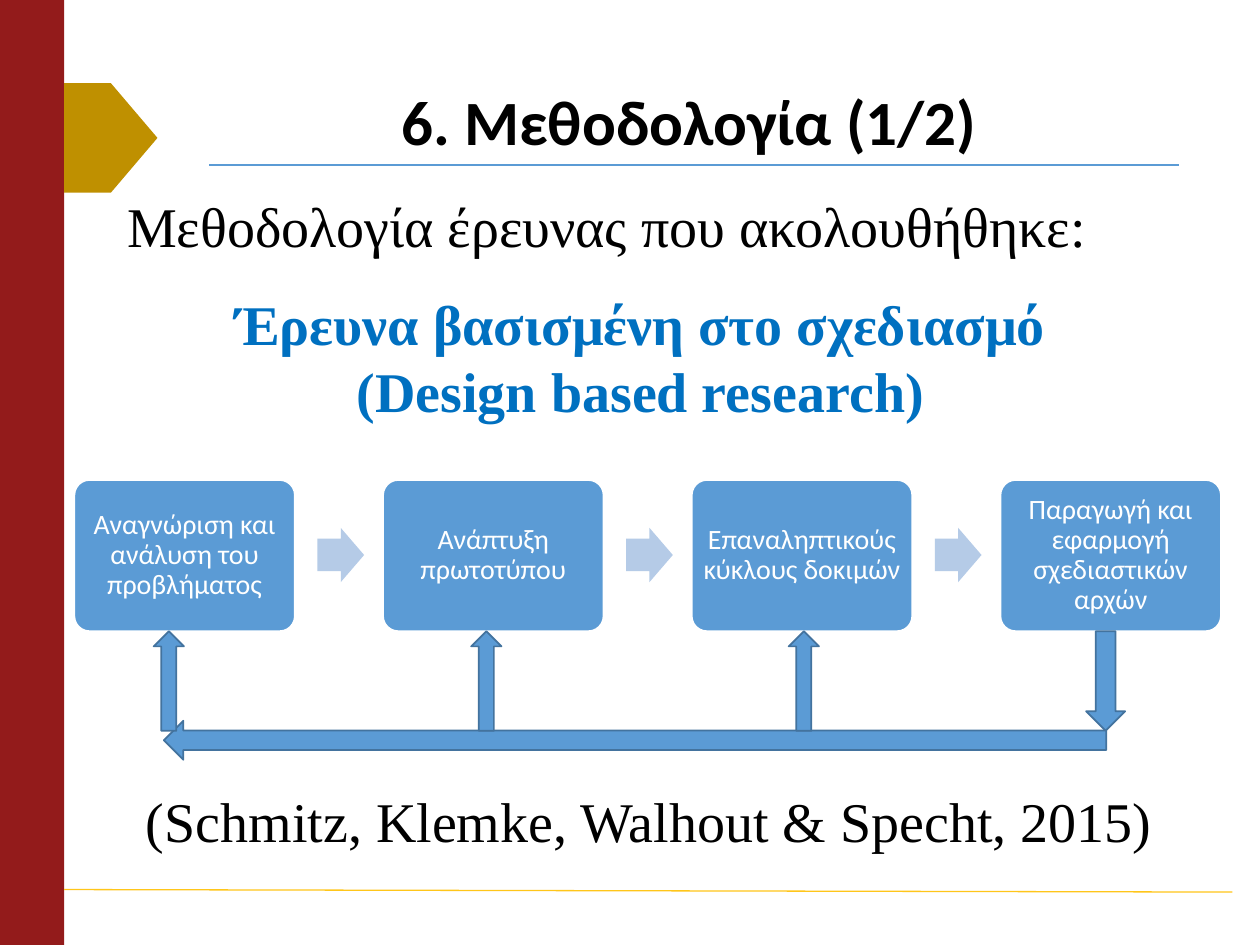
import dataclasses

import pptx
import pptx.dml.color
import pptx.enum.shapes
import pptx.enum.text
import pptx.oxml.ns
import pptx.util
from lxml import etree

Inches = pptx.util.Inches
Pt = pptx.util.Pt
Preset = pptx.enum.shapes.MSO_SHAPE
Align = pptx.enum.text.PP_ALIGN
Anchor = pptx.enum.text.MSO_ANCHOR


@dataclasses.dataclass(frozen=True)
class Theme:
    blue: str = "5B9BD5"
    dark_blue: str = "43739E"
    pale_blue: str = "B5CBE7"
    emphasis: str = "0070C0"
    red: str = "931B1B"
    ochre: str = "BF9000"
    yellow: str = "FFC61A"
    black: str = "000000"
    white: str = "FFFFFF"
    sans: str = "Calibri"
    serif: str = "Times New Roman"
    title_size: int = 36
    body_size: int = 32
    step_size: int = 16


THEME = Theme()

STEPS = [
    "Αναγνώριση και ανάλυση του προβλήματος",
    "Ανάπτυξη πρωτοτύπου",
    "Επαναληπτικούς κύκλους δοκιμών",
    "Παραγωγή και εφαρμογή σχεδιαστικών αρχών",
]
STEP_LEFT, STEP_TOP, STEP_PITCH = 0.59, 3.81, 2.45
STEP_WIDTH, STEP_HEIGHT = 1.75, 1.2
FEEDBACK_LEFT, FEEDBACK_PITCH = 1.22, 2.52
FEEDBACK_TOP, FEEDBACK_HEIGHT = 5.01, 0.79


def rgb(color):
    return pptx.dml.color.RGBColor.from_string(color)


def write_text(frame, text, *, size, color=THEME.black, font=THEME.serif,
               bold=False, align=Align.LEFT, anchor=Anchor.TOP,
               spacing=1.0, margin=None):
    frame.word_wrap = True
    frame.vertical_anchor = anchor
    if margin is not None:
        frame.margin_left = frame.margin_right = Inches(margin)
        frame.margin_top = frame.margin_bottom = Inches(margin)
    frame.text = text
    for paragraph in frame.paragraphs:
        paragraph.alignment = align
        paragraph.line_spacing = spacing
        paragraph.font.name = font
        paragraph.font.size = Pt(size)
        paragraph.font.bold = bold
        paragraph.font.color.rgb = rgb(color)


def add_text(slide, box, text, **text_format):
    frame = slide.shapes.add_textbox(*map(Inches, box)).text_frame
    write_text(frame, text, **text_format)


def add_preset(slide, preset, box, fill, line=None, adjustments=()):
    shape = slide.shapes.add_shape(preset, *map(Inches, box))
    shape.shadow.inherit = False
    shape.fill.solid()
    shape.fill.fore_color.rgb = rgb(fill)
    if line:
        shape.line.color.rgb = rgb(line)
        shape.line.width = Pt(1)
    else:
        shape.line.fill.background()
    for index, value in enumerate(adjustments):
        shape.adjustments[index] = value
    return shape


def add_rule(slide, start, end, color):
    rule = slide.shapes.add_connector(
        pptx.enum.shapes.MSO_CONNECTOR.STRAIGHT, *map(Inches, start + end))
    rule.line.color.rgb = rgb(color)
    rule.line.width = Pt(0.75)
    etree.SubElement(rule._element.spPr, pptx.oxml.ns.qn("a:effectLst"))


def add_frame(slide):
    add_preset(slide, Preset.RECTANGLE, (0, 0, 0.51, 7.5), THEME.red)
    add_rule(slide, (1.66, 1.31), (9.36, 1.31), THEME.blue)
    add_rule(slide, (0.51, 7.06), (9.78, 7.08), THEME.yellow)
    add_preset(slide, Preset.PENTAGON, (0.51, 0.66, 0.74, 0.87), THEME.ochre)


def add_steps(slide):
    for index, label in enumerate(STEPS):
        left = STEP_LEFT + index * STEP_PITCH
        if index:
            add_preset(slide, Preset.RIGHT_ARROW,
                       (left - 0.52, 4.19, 0.37, 0.43),
                       THEME.pale_blue, adjustments=(0.6, 0.5))
        step = add_preset(slide, Preset.ROUNDED_RECTANGLE,
                          (left, STEP_TOP, STEP_WIDTH, STEP_HEIGHT),
                          THEME.blue, THEME.white, (0.1,))
        write_text(step.text_frame, label, size=THEME.step_size,
                   color=THEME.white, font=THEME.sans, align=Align.CENTER,
                   anchor=Anchor.MIDDLE, spacing=0.9, margin=0.04)


def add_feedback_loop(slide):
    arrows = [
        (Preset.DOWN_ARROW, (8.62, FEEDBACK_TOP, 0.31, FEEDBACK_HEIGHT)),
        (Preset.LEFT_ARROW, (1.3, 5.72, 7.48, 0.31)),
    ]
    for index in range(len(STEPS) - 1):
        left = FEEDBACK_LEFT + index * FEEDBACK_PITCH
        arrows.append((Preset.UP_ARROW,
                       (left, FEEDBACK_TOP, 0.24, FEEDBACK_HEIGHT)))
    for preset, box in arrows:
        add_preset(slide, preset, box, THEME.blue, THEME.dark_blue)


def main():
    deck = pptx.Presentation()
    deck.slide_width, deck.slide_height = Inches(10), Inches(7.5)
    slide = deck.slides.add_slide(deck.slide_layouts[6])

    add_frame(slide)
    add_text(slide, (1.61, 0.68, 7.72, 0.63), "6. Μεθοδολογία (1/2)",
             size=THEME.title_size, font=THEME.sans, bold=True,
             align=Align.CENTER, anchor=Anchor.MIDDLE, spacing=0.9)
    add_text(slide, (0.91, 1.47, 8.35, 0.64),
             "Μεθοδολογία έρευνας που ακολουθήθηκε:", size=THEME.body_size)
    add_text(slide, (0.91, 2.25, 8.35, 1.18),
             "Έρευνα βασισμένη στο σχεδιασμό\n(Design based research)",
             size=THEME.body_size, color=THEME.emphasis, bold=True,
             align=Align.CENTER)
    add_steps(slide)
    add_feedback_loop(slide)
    add_text(slide, (1.06, 6.19, 8.35, 0.64),
             "(Schmitz, Klemke, Walhout & Specht, 2015)",
             size=THEME.body_size)

    deck.save("out.pptx")


if __name__ == "__main__":
    main()
